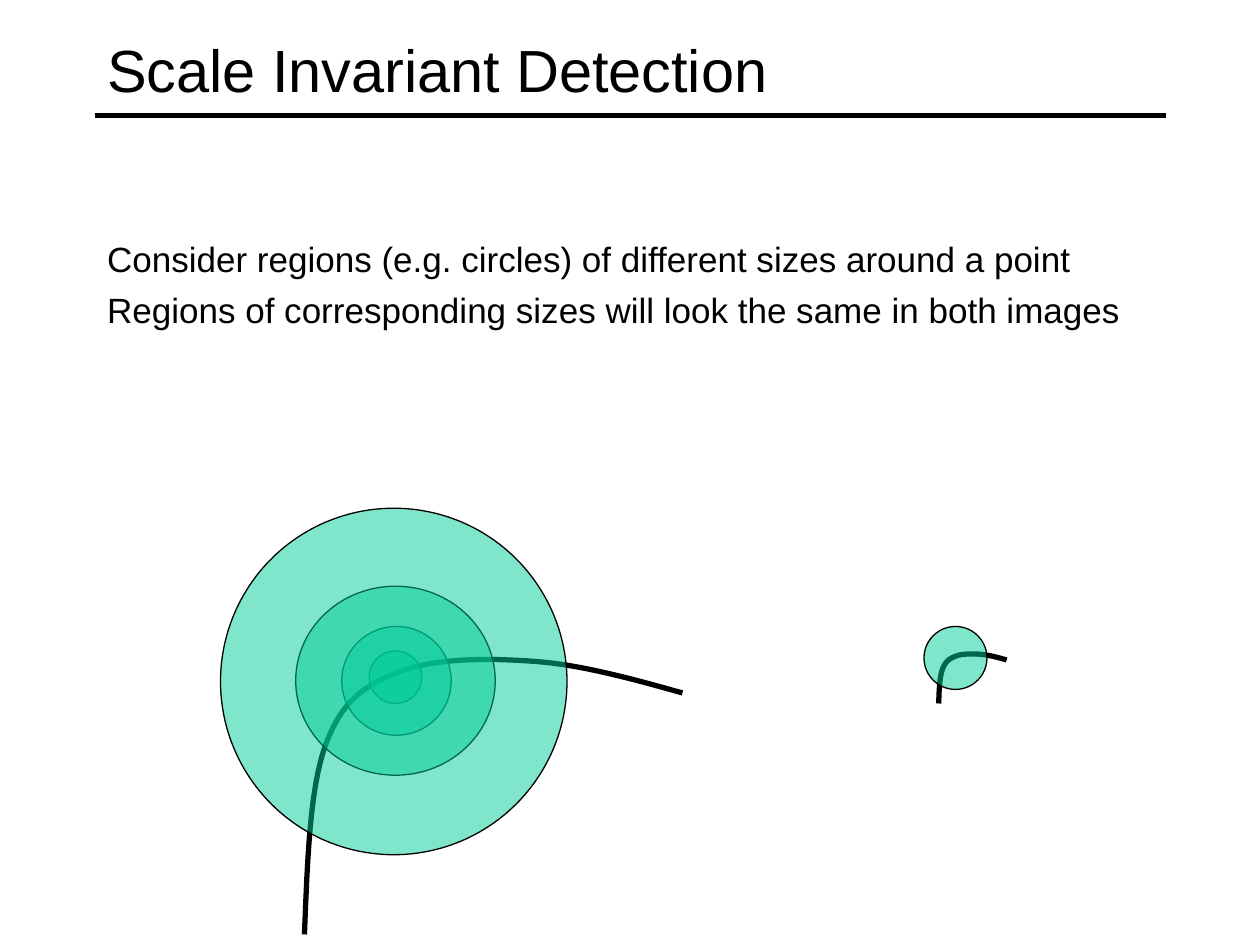
"""Build the slide on scale invariant detection with circles around a curve point."""

from typing import Any, NamedTuple

from pptx import Presentation
from pptx.dml.color import RGBColor
from pptx.enum import shapes, text
from pptx.oxml import ns, xmlchemy
from pptx.util import Pt

BLACK = RGBColor(0x00, 0x00, 0x00)
GREEN = RGBColor(0x00, 0xCC, 0x99)
FONT = "Arial"
HEAVY = 3
THIN = 0.75
STEPS = 16


class Box(NamedTuple):
    left: float
    top: float
    width: float
    height: float


class Curve(NamedTuple):
    left: float
    bottom: float
    scale: float


TITLE_BOX = Box(54, 6, 612, 66)
BODY_BOX = Box(54, 132, 612, 324)
LARGE_CURVE = Curve(174, 534, 1)
SMALL_CURVE = Curve(536.4, 402, 0.18)
LARGE_REGIONS = [
    Box(211, 372, 30, 30),
    Box(195.3, 358, 62.6, 62.2),
    Box(169, 335, 114, 108),
    Box(126, 290.4, 198, 198),
]
SMALL_REGION = Box(528, 358, 36, 36)
CONTROL_POINTS = [
    (0, 0), (1.7, -41.5), (3, -83.3), (12, -108),
    (21, -133), (34, -142.3), (54, -150),
    (73.7, -158), (105.4, -158), (132, -156),
    (158.6, -154), (187.4, -146), (216, -138),
]


def place(shape: Any, box: Box) -> None:
    """Move and size a shape."""
    shape.left, shape.top, shape.width, shape.height = map(Pt, box)


def add_line_format(shape: Any, width: float) -> None:
    """Give a shape or connector a plain black line."""
    shape.line.color.rgb = BLACK
    shape.line.width = Pt(width)


def write_text(frame: Any, *lines: str, size: float, anchor: Any,
               before: float = 0, hanging: float = 0) -> None:
    """Write left-aligned paragraphs in one format."""
    frame.text = "\n".join(lines)
    frame.word_wrap = True
    frame.auto_size = text.MSO_AUTO_SIZE.NONE
    frame.vertical_anchor = anchor
    for paragraph in frame.paragraphs:
        paragraph.alignment = text.PP_ALIGN.LEFT
        paragraph.space_before = Pt(before)
        properties = paragraph._p.get_or_add_pPr()
        properties.set("marL", str(Pt(hanging)))
        properties.set("indent", str(-Pt(hanging)))
        properties.append(xmlchemy.OxmlElement("a:buNone"))
        for run in paragraph.runs:
            run.font.name = FONT
            run.font.size = Pt(size)
            run.font.color.rgb = BLACK


def add_rule(container: Any, left: float, right: float, top: float) -> None:
    """Draw the heavy horizontal rule under the title."""
    rule = container.add_connector(
        shapes.MSO_CONNECTOR.STRAIGHT, Pt(left), Pt(top), Pt(right), Pt(top))
    add_line_format(rule, HEAVY)
    rule._element.spPr.append(xmlchemy.OxmlElement("a:effectLst"))


def bezier_points() -> list[tuple[float, float]]:
    """Sample the chain of cubic segments that forms the curve."""
    points = [CONTROL_POINTS[0]]
    for start in range(0, len(CONTROL_POINTS) - 1, 3):
        segment = CONTROL_POINTS[start:start + 4]
        for step in range(1, STEPS + 1):
            t = step / STEPS
            weights = ((1 - t) ** 3, 3 * t * (1 - t) ** 2, 3 * t * t * (1 - t), t ** 3)
            points.append(tuple(
                sum(weight * point[axis] for weight, point in zip(weights, segment))
                for axis in (0, 1)))
    return points


def add_curve(container: Any, curve: Curve) -> None:
    """Draw the open curve at the given place and scale."""
    points = [(Pt(curve.left + x * curve.scale), Pt(curve.bottom + y * curve.scale))
              for x, y in bezier_points()]
    builder = container.build_freeform(*points[0])
    builder.add_line_segments(points[1:], close=False)
    shape = builder.convert_to_shape()
    shape.shadow.inherit = False
    shape.fill.background()
    add_line_format(shape, HEAVY)


def add_region(container: Any, box: Box) -> None:
    """Draw a half-transparent circular region."""
    shape = container.add_shape(shapes.MSO_SHAPE.OVAL, *map(Pt, box))
    shape.shadow.inherit = False
    shape.fill.solid()
    shape.fill.fore_color.rgb = GREEN
    alpha = xmlchemy.OxmlElement("a:alpha")
    alpha.set("val", "50000")
    shape._element.spPr.find(".//" + ns.qn("a:srgbClr")).append(alpha)
    add_line_format(shape, THIN)


def main() -> None:
    """Build and save the slide."""
    presentation = Presentation()
    presentation.slide_width, presentation.slide_height = Pt(720), Pt(540)
    slide = presentation.slides.add_slide(presentation.slide_layouts[1])
    title, body = slide.placeholders
    place(title, TITLE_BOX)
    write_text(title.text_frame, "Scale Invariant Detection",
               size=34, anchor=text.MSO_ANCHOR.MIDDLE)
    place(body, BODY_BOX)
    write_text(body.text_frame,
               "Consider regions (e.g. circles) of different sizes around a point",
               "Regions of corresponding sizes will look the same in both images",
               size=20, anchor=text.MSO_ANCHOR.TOP, before=5, hanging=27)
    add_rule(slide.shapes, 54, 666, 66)
    add_curve(slide.shapes, LARGE_CURVE)
    for region in LARGE_REGIONS:
        add_region(slide.shapes, region)
    group = slide.shapes.add_group_shape()
    add_curve(group.shapes, SMALL_CURVE)
    add_region(group.shapes, SMALL_REGION)
    presentation.save("out.pptx")


if __name__ == "__main__":
    main()
